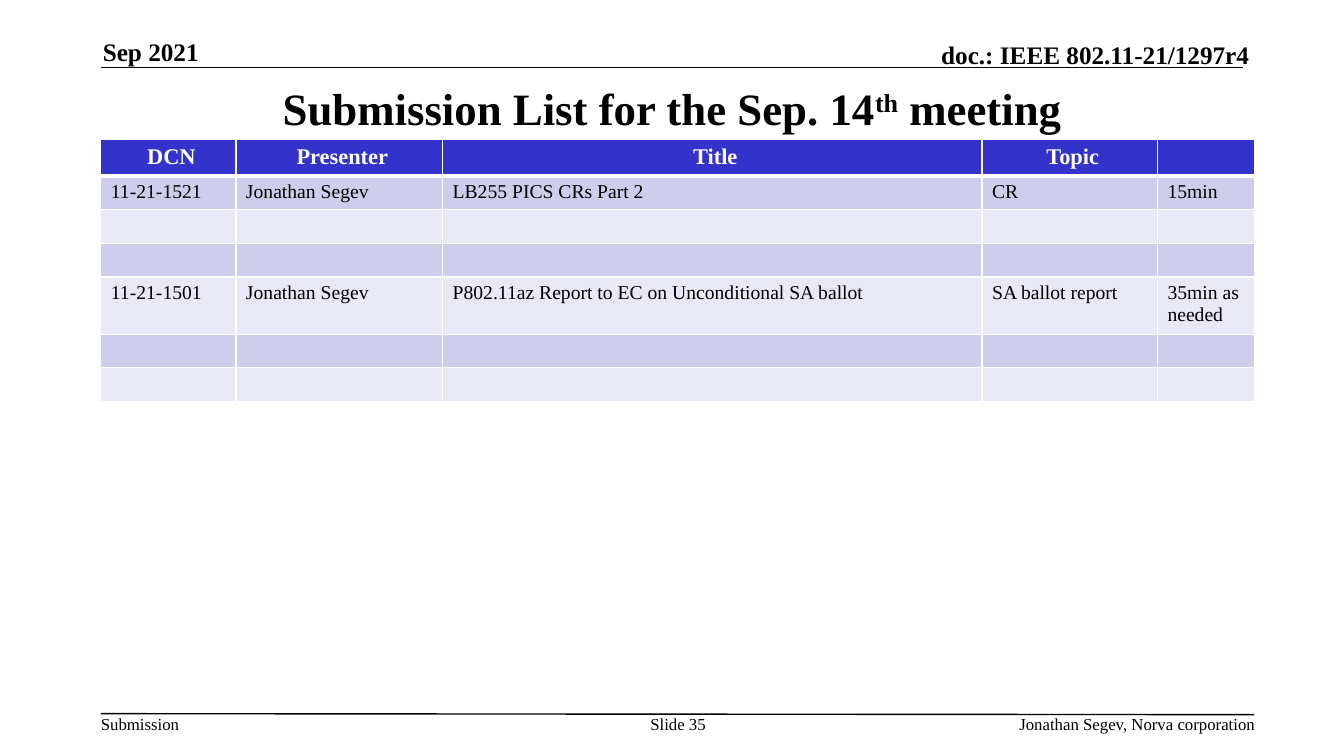
import pptx
import pptx.util
import pptx.dml.color
import pptx.enum.shapes
import pptx.enum.text
import pptx.oxml.ns
import lxml.etree

PX = 9144  # EMU in one px, 100 px to the inch
THEME = {
    "font": "Times New Roman",
    "ink": "000000", "paper": "FFFFFF", "head": "3333CC",
    "bands": ("CECEEC", "E8E8F6"),
    "title": 32, "mark": 18, "label": 16, "body": 14, "foot": 12,
}
ALIGN = pptx.enum.text.PP_ALIGN
ANCHOR = pptx.enum.text.MSO_ANCHOR
RGB = pptx.dml.color.RGBColor.from_string
qn = pptx.oxml.ns.qn


def add_run(para, words, size, bold=False, color=THEME["ink"]):
    run = para.add_run()
    run.text = words
    run.font.name = THEME["font"]
    run.font.size = pptx.util.Pt(size)
    run.font.bold = bold
    run.font.color.rgb = RGB(color)
    return run


def add_edge(cell, side, width):
    """Draw one white border of a table cell; side is L, R, T or B."""
    props = cell._tc.get_or_add_tcPr()
    edge = lxml.etree.SubElement(props, qn("a:ln" + side), w=str(pptx.util.Pt(width)))
    fill = lxml.etree.SubElement(edge, qn("a:solidFill"))
    lxml.etree.SubElement(fill, qn("a:srgbClr"), val=THEME["paper"])


deck = pptx.Presentation()
deck.slide_width = 1333 * PX
deck.slide_height = 750 * PX
slide = deck.slides.add_slide(deck.slide_layouts[5])

# Header and footer rules
for left, top, right, bottom in ((100, 67, 1233, 67), (100, 708, 1244, 709)):
    rule = slide.shapes.add_connector(
        pptx.enum.shapes.MSO_CONNECTOR.STRAIGHT,
        left * PX, top * PX, right * PX, bottom * PX)
    rule.line.color.rgb = RGB(THEME["ink"])
    rule.line.width = pptx.util.Pt(1)
    lxml.etree.SubElement(rule._element.spPr, qn("a:effectLst"))

# Header and footer texts
marks = (
    ("Sep 2021", (102, 36, 273, 30), "mark", ALIGN.LEFT),
    ("doc.: IEEE 802.11-21/1297r4", (729, 39, 510, 30), "mark", ALIGN.RIGHT),
    ("Submission", (100, 708, 79, 20), "foot", ALIGN.LEFT),
    ("Slide 35", (634, 708, 77, 40), "foot", ALIGN.CENTER),
    ("Jonathan Segev, Norva corporation", (781, 708, 464, 20), "foot", ALIGN.RIGHT),
)
for words, place, role, align in marks:
    box = slide.shapes.add_textbox(*(n * PX for n in place))
    frame = box.text_frame
    frame.margin_left = frame.margin_right = frame.margin_top = frame.margin_bottom = 0
    frame.word_wrap = words != "Submission"
    frame.vertical_anchor = ANCHOR.BOTTOM if role == "mark" else ANCHOR.TOP
    frame.paragraphs[0].alignment = align
    add_run(frame.paragraphs[0], words, THEME[role], bold=role == "mark")

# Title
title = slide.shapes.title
title.left, title.top, title.width, title.height = (n * PX for n in (100, 75, 1133, 64))
frame = title.text_frame
frame.auto_size = pptx.enum.text.MSO_AUTO_SIZE.NONE
frame.vertical_anchor = ANCHOR.MIDDLE
para = frame.paragraphs[0]
para.alignment = ALIGN.CENTER
add_run(para, "Submission List for the Sep. 14", THEME["title"], True)
raised = add_run(para, "th", THEME["title"], True)
raised.font._element.set("baseline", "30000")
add_run(para, " meeting", THEME["title"], True)

# Submission table
blank = ("",) * 5
rows = (
    ("DCN", "Presenter", "Title", "Topic", ""),
    ("11-21-1521", "Jonathan Segev", "LB255 PICS CRs Part 2", "CR", "15min"),
    blank,
    blank,
    ("11-21-1501", "Jonathan Segev",
     "P802.11az Report to EC on Unconditional SA ballot",
     "SA ballot report", "35min as needed"),
    blank,
    blank,
)
widths = (134, 205, 535, 174, 96)
heights = (34, 31, 31, 31, 53, 31, 31)
table = slide.shapes.add_table(
    len(rows), len(widths), 100 * PX, 138 * PX,
    sum(widths) * PX, sum(heights) * PX).table
for col, width in zip(table.columns, widths):
    col.width = width * PX
for r, row in enumerate(rows):
    table.rows[r].height = heights[r] * PX
    head = r == 0
    size = THEME["label" if head else "body"]
    for c, words in enumerate(row):
        cell = table.cell(r, c)
        cell.margin_left = 10 * PX
        cell.margin_right = (4 if head else 10) * PX
        cell.margin_top = cell.margin_bottom = 5 * PX
        for side in "LRTB":
            thick = (r, side) in ((0, "B"), (1, "T"))
            add_edge(cell, side, 3 if thick else 1)
        cell.fill.solid()
        cell.fill.fore_color.rgb = RGB(
            THEME["head"] if head else THEME["bands"][(r - 1) % 2])
        para = cell.text_frame.paragraphs[0]
        para.alignment = ALIGN.CENTER if head else ALIGN.LEFT
        if words:
            add_run(para, words, size, head, THEME["paper" if head else "ink"])
        else:
            lxml.etree.SubElement(para._p, qn("a:endParaRPr"), sz=str(size * 100))

deck.save("out.pptx")
